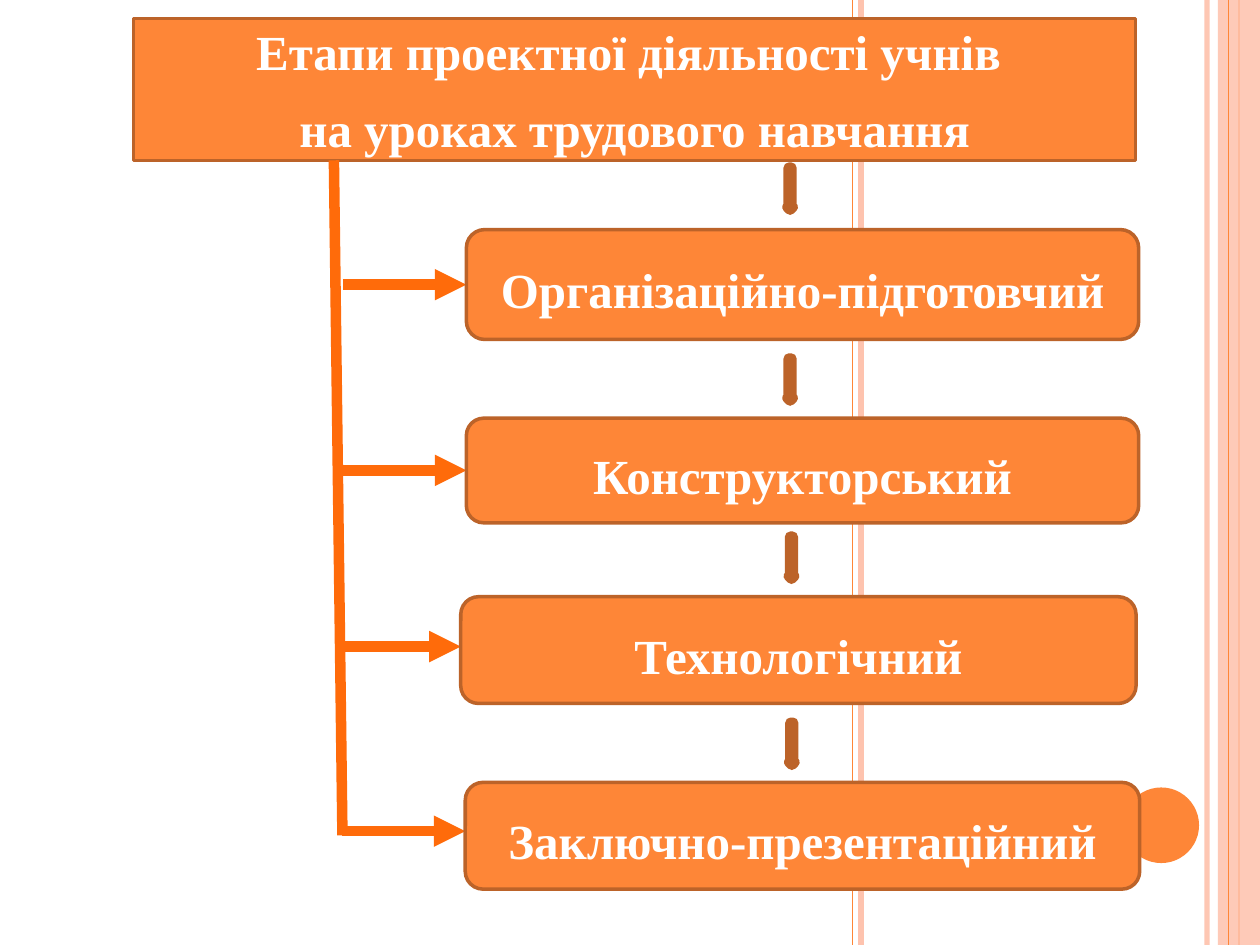
from collections import namedtuple

from lxml.etree import SubElement
from pptx import Presentation
from pptx.dml.color import RGBColor
from pptx.enum.shapes import MSO_CONNECTOR, MSO_SHAPE
from pptx.enum.text import MSO_ANCHOR, MSO_AUTO_SIZE, PP_ALIGN
from pptx.oxml.ns import qn
from pptx.util import Pt

ORANGE = RGBColor(0xFE, 0x86, 0x37)
BROWN = RGBColor(0xBC, 0x63, 0x29)
BRIGHT = RGBColor(0xFF, 0x6B, 0x0A)
PINK = RGBColor(0xFE, 0xC3, 0xAE)
WHITE = RGBColor(0xFF, 0xFF, 0xFF)
FONT = "Times New Roman"
WIDTH, HEIGHT = 720, 540

Box = namedtuple("Box", "left top width height")
Stage = namedtuple("Stage", "name box branch_y drop_left drop_top space_after")

HEADING_BOX = Box(76.4, 10.6, 572.5, 81)
HEADING = ["Етапи проектної діяльності учнів ", "на уроках трудового навчання"]
STAGES = [
    Stage("Організаційно-підготовчий", Box(266.5, 131.2, 384.2, 62.8), 162.7, 450, 95.8, 10),
    Stage("Конструкторський", Box(266.5, 239, 384.2, 59.8), 268.8, 450, 204.9, 0),
    Stage("Технологічний", Box(263.3, 341, 385.9, 61), 369.5, 450.8, 306.7, 10),
    Stage("Заключно-презентаційний", Box(265.9, 447.1, 385.4, 61), 475, 451, 413, 10),
]


def set_opacity(fill_parent, percent):
    """Make the solid colour found inside an element partly transparent."""
    colour = next(fill_parent.iter(qn("a:srgbClr")))
    SubElement(colour, qn("a:alpha"), val=str(percent * 1000))


def add_line(slide, start, end, colour, width, arrow=False):
    """Draw a straight line, with an arrowhead at its end if asked."""
    line = slide.shapes.add_connector(
        MSO_CONNECTOR.STRAIGHT, *(Pt(value) for value in (*start, *end)))
    line.line.color.rgb = colour
    line.line.width = Pt(width)
    properties = line._element.spPr
    if arrow:
        SubElement(properties.find(qn("a:ln")), qn("a:tailEnd"), type="triangle")
    SubElement(properties, qn("a:effectLst"))
    return line


def paint(shape, fill, outline=None, width=0):
    """Give a shape its fill and outline, without a shadow."""
    shape.shadow.inherit = False
    shape.fill.solid()
    shape.fill.fore_color.rgb = fill
    if outline is None:
        shape.line.fill.background()
    else:
        shape.line.color.rgb = outline
        shape.line.width = Pt(width)


def add_preset(slide, kind, box, fill, outline=None, width=0):
    """Add a painted preset shape in the given box."""
    shape = slide.shapes.add_shape(kind, *(Pt(value) for value in box))
    paint(shape, fill, outline, width)
    return shape


def write(shape, lines, spacing, space_after):
    """Write bold centred white lines in a shape."""
    frame = shape.text_frame
    frame.word_wrap = True
    frame.auto_size = MSO_AUTO_SIZE.NONE
    frame.vertical_anchor = MSO_ANCHOR.MIDDLE
    for index, line in enumerate(lines):
        paragraph = frame.add_paragraph() if index else frame.paragraphs[0]
        paragraph.alignment = PP_ALIGN.CENTER
        paragraph.line_spacing = spacing
        paragraph.space_after = Pt(space_after)
        run = paragraph.add_run()
        run.text = line
        run.font.name = FONT
        run.font.size = Pt(28)
        run.font.bold = True
        run.font.color.rgb = WHITE


def add_side_decor(slide, box):
    """Draw the vertical stripes, band and dot along the right side."""
    right, bottom = box.left + box.width, box.top + box.height

    def stripe(inset, colour, width):
        """Draw one full-height stripe at a distance from the right edge."""
        x = right - inset
        return add_line(slide, (x, box.top), (x, bottom), colour, width)

    set_opacity(stripe(30.2, PINK, 3)._element.spPr, 93)
    stripe(228, PINK, 3)
    stripe(232.8, ORANGE, 1)
    stripe(12, ORANGE, 1.5)
    band = add_preset(slide, MSO_SHAPE.RECTANGLE,
                      Box(right - 24, box.top, 24, box.height), PINK)
    set_opacity(band._element.spPr, 87)
    stripe(18, ORANGE, 0.75)
    add_preset(slide, MSO_SHAPE.OVAL, Box(right - 78, bottom - 90, 43.2, 43.2), ORANGE)


def add_heading(slide, box):
    """Turn the title placeholder into the rounded heading box."""
    heading = slide.shapes.title
    heading.left, heading.top, heading.width, heading.height = (Pt(v) for v in box)
    outline = SubElement(heading._element.spPr, qn("a:prstGeom"), prst="roundRect")
    SubElement(outline, qn("a:avLst"))
    paint(heading, ORANGE, BROWN, 2)
    write(heading, HEADING, 1.0, 10)
    slide.shapes._spTree.append(heading._element)


def add_stage(slide, stage):
    """Place a stage box with the branch and drop arrows leading to it."""
    box = stage.box
    add_preset(slide, MSO_SHAPE.DOWN_ARROW,
               Box(stage.drop_left, stage.drop_top, 3.0, 24), ORANGE, BROWN, 6)
    add_line(slide, (box.left - 70.6, stage.branch_y), (box.left, stage.branch_y),
             BRIGHT, 6, arrow=True)
    label = add_preset(slide, MSO_SHAPE.ROUNDED_RECTANGLE, box, ORANGE, BROWN, 2)
    write(label, [stage.name], 1.15, stage.space_after)


def main():
    """Build the slide and save it."""
    deck = Presentation()
    deck.slide_width, deck.slide_height = Pt(WIDTH), Pt(HEIGHT)
    slide = deck.slides.add_slide(deck.slide_layouts[5])
    add_side_decor(slide, Box(0, 0, WIDTH, HEIGHT))
    add_heading(slide, HEADING_BOX)
    add_line(slide, (190.8, 91.6), (195.7, 477.4), BRIGHT, 6)
    for stage in STAGES:
        add_stage(slide, stage)
    deck.save("out.pptx")


if __name__ == "__main__":
    main()
